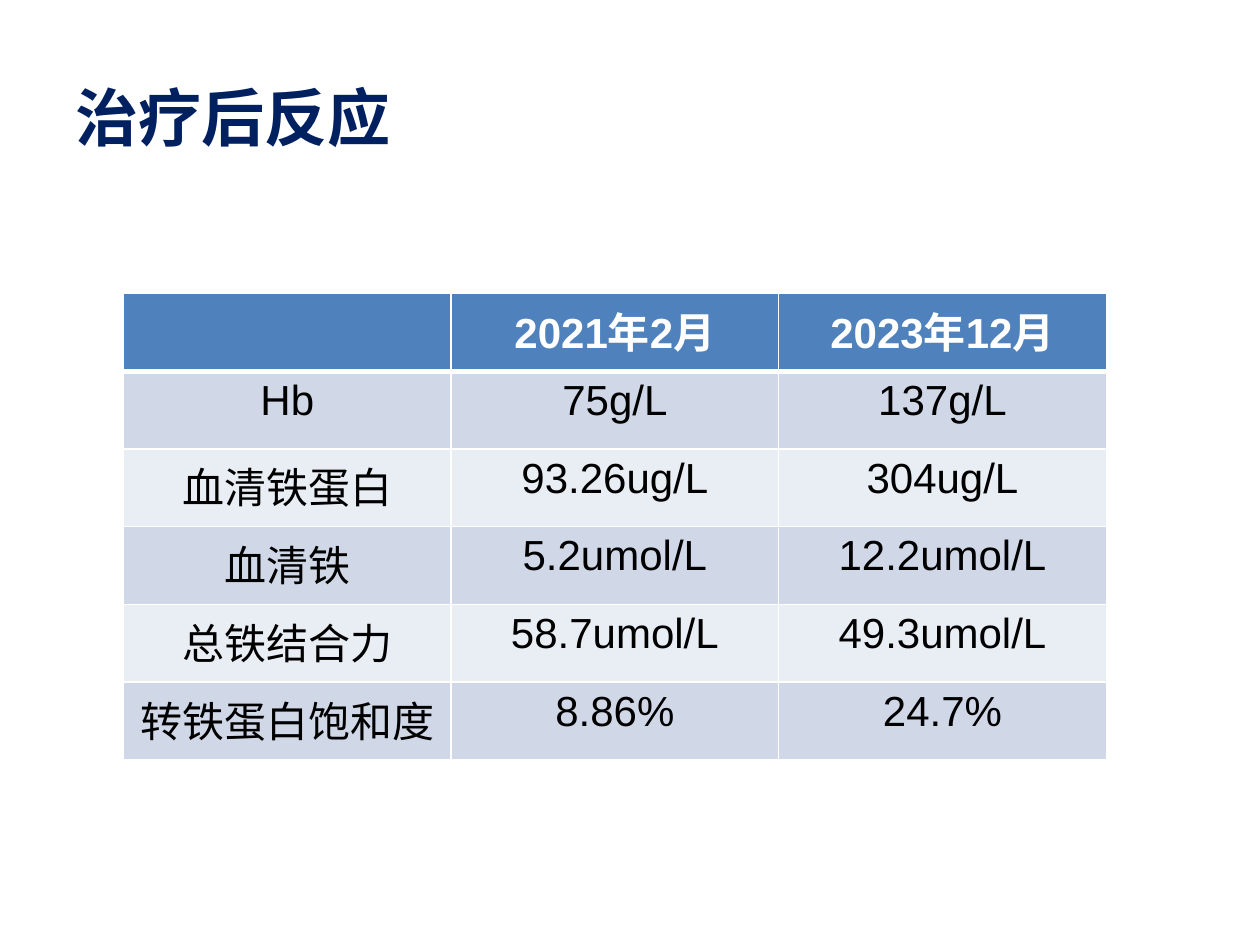
from lxml.etree import SubElement
from pptx import Presentation
from pptx.dml.color import RGBColor
from pptx.enum.text import MSO_ANCHOR, PP_ALIGN
from pptx.oxml.ns import qn
from pptx.util import Inches, Pt

FONT = "Arial"
NAVY, BLUE, WHITE, BLACK = "002060", "4F81BD", "FFFFFF", "000000"
BANDS = ("D0D8E8", "E9EDF4")
ROWS = [
    ("", "2021年2月", "2023年12月"),
    ("Hb", "75g/L", "137g/L"),
    ("血清铁蛋白", "93.26ug/L", "304ug/L"),
    ("血清铁", "5.2umol/L", "12.2umol/L"),
    ("总铁结合力", "58.7umol/L", "49.3umol/L"),
    ("转铁蛋白饱和度", "8.86%", "24.7%"),
]


def rgb(color):
    return RGBColor.from_string(color)


def format_paragraph(paragraph, size, color, bold, alignment):
    paragraph.alignment = alignment
    for font in [paragraph.font] + [run.font for run in paragraph.runs]:
        font.name, font.size, font.bold = FONT, Pt(size), bold
        font.color.rgb = rgb(color)


def add_borders(cell, widths):
    """Draw white borders; widths maps a side (L, R, T, B) to points.

    Must run before the cell is filled, as lines come first in the XML.
    """
    properties = cell._tc.get_or_add_tcPr()
    for side, width in widths.items():
        line = SubElement(properties, qn(f"a:ln{side}"), w=str(Pt(width)))
        fill = SubElement(line, qn("a:solidFill"))
        SubElement(fill, qn("a:srgbClr"), val=WHITE)


def place_title(slide, left, top, width, height):
    title = slide.shapes.title
    title.left, title.top, title.width, title.height = left, top, width, height
    title.text_frame.text = "治疗后反应"
    title.text_frame.vertical_anchor = MSO_ANCHOR.MIDDLE
    format_paragraph(title.text_frame.paragraphs[0], 36, NAVY, True, PP_ALIGN.LEFT)


def add_results_table(slide, left, top, width, height):
    table = slide.shapes.add_table(
        len(ROWS), len(ROWS[0]), left, top, width, height
    ).table
    for row_index, values in enumerate(ROWS):
        is_header = row_index == 0
        widths = {
            "L": 1,
            "R": 1,
            "T": 3 if row_index == 1 else 1,
            "B": 3 if is_header else 1,
        }
        for column_index, value in enumerate(values):
            cell = table.cell(row_index, column_index)
            add_borders(cell, widths)
            cell.fill.solid()
            cell.fill.fore_color.rgb = rgb(
                BLUE if is_header else BANDS[(row_index - 1) % 2]
            )
            cell.text_frame.text = value
            format_paragraph(
                cell.text_frame.paragraphs[0],
                24,
                WHITE if is_header else BLACK,
                is_header,
                PP_ALIGN.CENTER,
            )


def main():
    presentation = Presentation()
    presentation.slide_width = Inches(10)
    presentation.slide_height = Inches(7.5)
    slide = presentation.slides.add_slide(presentation.slide_layouts[5])
    place_title(slide, Inches(0.5), Inches(0.3), Inches(9), Inches(1.25))
    add_results_table(slide, Inches(0.98), Inches(2.33), Inches(7.8), Inches(3.7))
    presentation.save("out.pptx")


if __name__ == "__main__":
    main()
